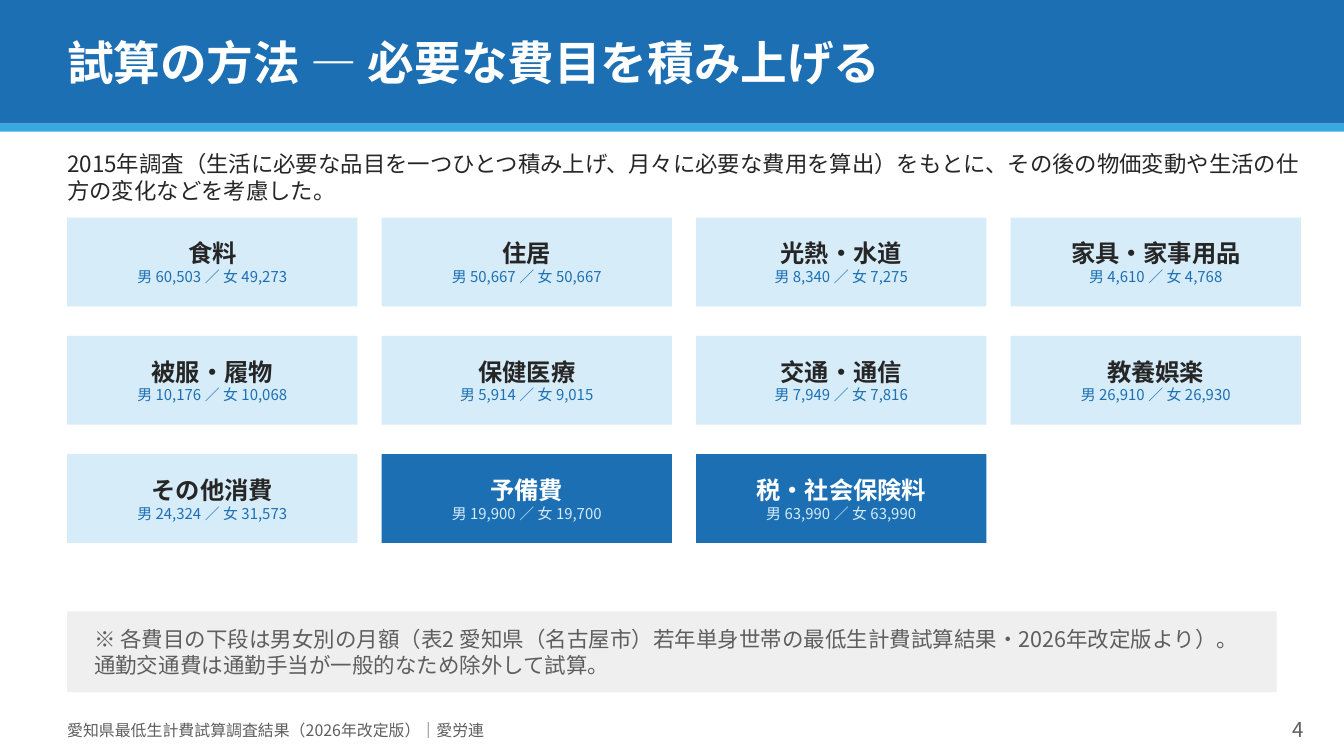
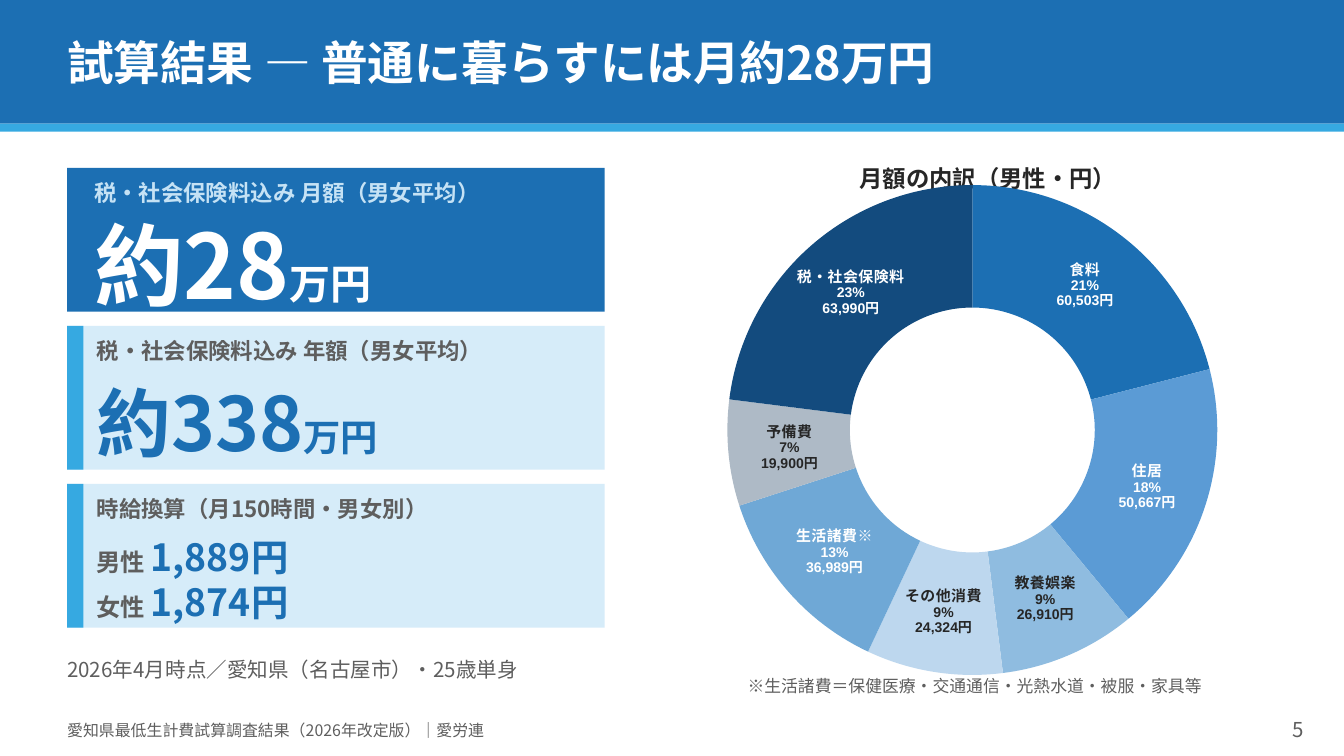
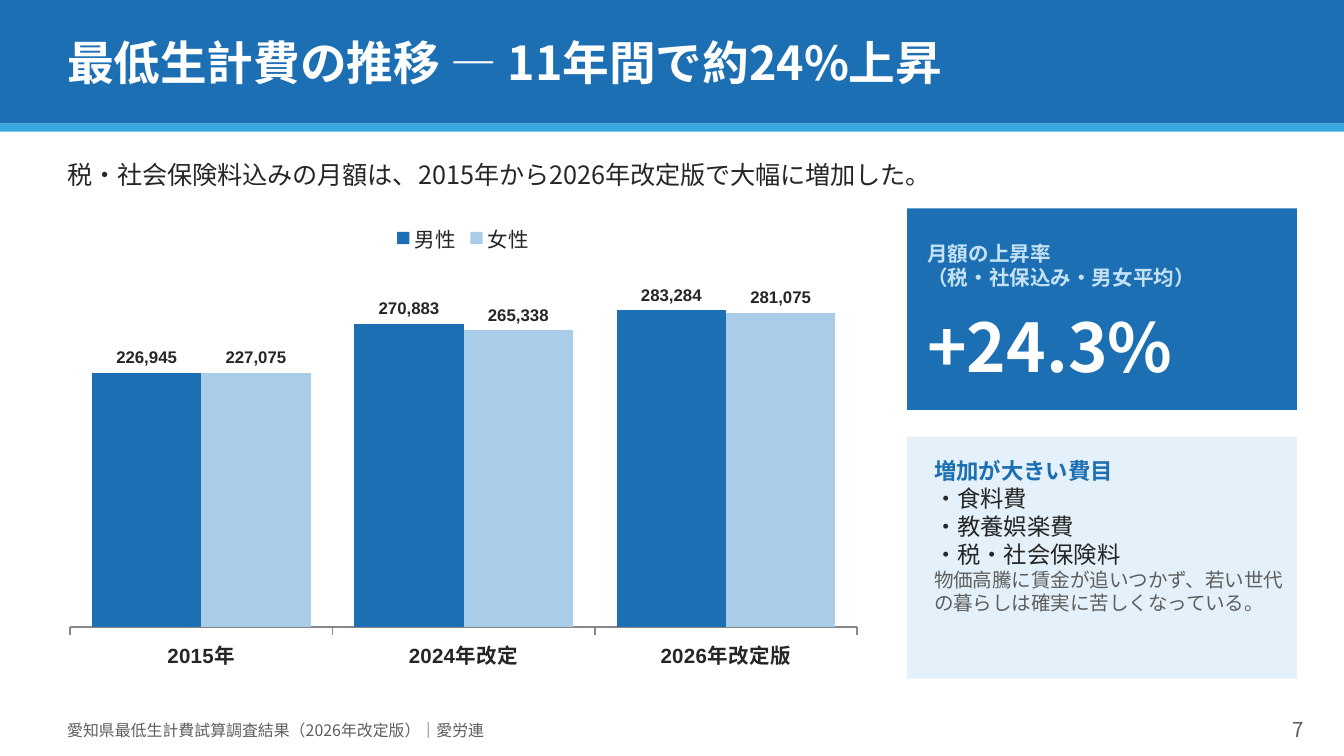
from dataclasses import dataclass
from typing import NamedTuple

import lxml.etree
import pptx
import pptx.chart.chart
import pptx.chart.data
import pptx.dml.color
import pptx.enum.chart
import pptx.enum.shapes
import pptx.enum.text
import pptx.oxml.ns
import pptx.presentation
import pptx.shapes.base
import pptx.slide
import pptx.text.text
import pptx.util

BLUE, SKY, PALE, MIST = "1C6FB3", "36A9E1", "D6ECF9", "E4F1FA"
LIGHT, INK, GREY, WHITE = "C5E2F5", "262626", "5E5E5E", "FFFFFF"
FONT, CHART_FONT, LABEL_FONT = "Noto Sans CJK JP", "Calibri", "Arial"
FOOTER = "愛知県最低生計費試算調査結果（2026年改定版）｜愛労連"
LEFT = pptx.enum.text.PP_ALIGN.LEFT
CENTER = pptx.enum.text.PP_ALIGN.CENTER
RIGHT = pptx.enum.text.PP_ALIGN.RIGHT
MIDDLE = pptx.enum.text.MSO_ANCHOR.MIDDLE
TOP = pptx.enum.text.MSO_ANCHOR.TOP


class Area(NamedTuple):
    """Left, top, width and height in inches."""

    left: float
    top: float
    width: float
    height: float


class Span(NamedTuple):
    """A stretch of text in one format."""

    text: str
    size: float
    ink: str
    bold: bool = False
    font: str = FONT


Lines = list[list[Span]]


@dataclass
class Expense:
    """Monthly amounts of one expense item."""

    name: str
    male: str
    female: str
    strong: bool = False


@dataclass
class Panel:
    """A headline figure with its caption."""

    caption: str
    figures: Lines
    strong: bool = False


@dataclass
class Slice:
    """One part of the monthly breakdown."""

    name: str
    percent: int
    amount: str
    fill: str
    ink: str


EXPENSES = [
    Expense("食料", "60,503", "49,273"),
    Expense("住居", "50,667", "50,667"),
    Expense("光熱・水道", "8,340", "7,275"),
    Expense("家具・家事用品", "4,610", "4,768"),
    Expense("被服・履物", "10,176", "10,068"),
    Expense("保健医療", "5,914", "9,015"),
    Expense("交通・通信", "7,949", "7,816"),
    Expense("教養娯楽", "26,910", "26,930"),
    Expense("その他消費", "24,324", "31,573"),
    Expense("予備費", "19,900", "19,700", strong=True),
    Expense("税・社会保険料", "63,990", "63,990", strong=True),
]
PANELS = [
    Panel("税・社会保険料込み 月額（男女平均）",
          [[Span("約28", 48, WHITE, True), Span("万円", 22, WHITE, True)]], strong=True),
    Panel("税・社会保険料込み 年額（男女平均）",
          [[Span("約338", 40, BLUE, True), Span("万円", 20, BLUE, True)]]),
    Panel("時給換算（月150時間・男女別）",
          [[Span(f"{who} ", 13, GREY, True), Span(wage, 20, BLUE, True)]
           for who, wage in (("男性", "1,889円"), ("女性", "1,874円"))]),
]
SLICES = [
    Slice("食料", 21, "60,503円", BLUE, WHITE),
    Slice("住居", 18, "50,667円", "5B9BD5", WHITE),
    Slice("教養娯楽", 9, "26,910円", "8FBCE0", INK),
    Slice("その他消費", 9, "24,324円", "BDD7EE", INK),
    Slice("生活諸費※", 13, "36,989円", "6FA8D6", WHITE),
    Slice("予備費", 7, "19,900円", "AEBAC6", INK),
    Slice("税・社会保険料", 23, "63,990円", "134B7E", WHITE),
]


def colour(code: str) -> pptx.dml.color.RGBColor:
    """Turn a hex string into a colour."""
    return pptx.dml.color.RGBColor.from_string(code)


def add_element(parent: lxml.etree._Element, tag: str, **attributes: str) -> lxml.etree._Element:
    """Append a child element with a prefixed tag."""
    return lxml.etree.SubElement(parent, pptx.oxml.ns.qn(tag), attributes)


def write(para: pptx.text.text._Paragraph, text: str, *, size: float, ink: str,
          bold: bool = False, font: str = FONT) -> None:
    """Add formatted text to a paragraph."""
    span = para.add_run()
    span.text = text
    span.font.size = pptx.util.Pt(size)
    span.font.bold = bold
    span.font.color.rgb = colour(ink)
    span.font.name = font
    add_element(span._r.get_or_add_rPr(), "a:ea", typeface=font)


def write_lines(frame: pptx.text.text.TextFrame, lines: Lines,
                align: pptx.enum.text.PP_ALIGN | None = None) -> None:
    """Write one paragraph for each line."""
    for index, line in enumerate(lines):
        para = frame.add_paragraph() if index else frame.paragraphs[0]
        if align is not None:
            para.alignment = align
        for span in line:
            write(para, **span._asdict())


def format_frame(frame: pptx.text.text.TextFrame, anchor: pptx.enum.text.MSO_ANCHOR) -> None:
    """Wrap the text and remove the margins."""
    frame.word_wrap = True
    frame.auto_size = pptx.enum.text.MSO_AUTO_SIZE.NONE
    frame.vertical_anchor = anchor
    frame.margin_left = frame.margin_top = frame.margin_right = frame.margin_bottom = 0


def lengths(area: Area) -> list[pptx.util.Length]:
    """Convert an area to lengths."""
    return [pptx.util.Inches(value) for value in area]


def add_text(page: pptx.slide.Slide, area: Area, lines: Lines,
             align: pptx.enum.text.PP_ALIGN = LEFT) -> None:
    """Add a vertically centred text box."""
    box = page.shapes.add_textbox(*lengths(area))
    format_frame(box.text_frame, MIDDLE)
    write_lines(box.text_frame, lines, align)


def add_block(page: pptx.slide.Slide, area: Area, fill: str) -> None:
    """Add a plain filled rectangle."""
    block = page.shapes.add_shape(pptx.enum.shapes.MSO_SHAPE.RECTANGLE, *lengths(area))
    block.shadow.inherit = False
    block.fill.solid()
    block.fill.fore_color.rgb = colour(fill)
    block.line.fill.background()


def place_on_top(holder: pptx.shapes.base.BaseShape, area: Area,
                 anchor: pptx.enum.text.MSO_ANCHOR) -> None:
    """Move a placeholder to an area in front of the other shapes."""
    holder.left, holder.top, holder.width, holder.height = lengths(area)
    format_frame(holder.text_frame, anchor)
    holder.element.getparent().append(holder.element)


def add_page(deck: pptx.presentation.Presentation, title: str, number: int,
             layout: int = 5) -> pptx.slide.Slide:
    """Add a page with title band and footer."""
    page = deck.slides.add_slide(deck.slide_layouts[layout])
    add_block(page, Area(0, 0, 10, 0.92), BLUE)
    add_block(page, Area(0, 0.92, 10, 0.06), SKY)
    place_on_top(page.shapes.title, Area(0.5, 0, 9, 0.92), MIDDLE)
    write_lines(page.shapes.title.text_frame, [[Span(title, 25, WHITE, True)]], LEFT)
    add_text(page, Area(0.5, 5.28, 7.5, 0.3), [[Span(FOOTER, 8.5, GREY)]])
    add_text(page, Area(9.1, 5.28, 0.6, 0.3), [[Span(str(number), 11, GREY)]], RIGHT)
    return page


def set_bullet(para: pptx.text.text._Paragraph, bullet: str = "") -> None:
    """Give a paragraph a hanging bullet, or none."""
    indent = pptx.util.Inches(0.17) if bullet else 0
    properties = para._p.get_or_add_pPr()
    properties.set("marL", str(indent))
    properties.set("indent", str(-indent))
    if bullet:
        add_element(properties, "a:buFont", typeface=FONT)
        add_element(properties, "a:buChar", char=bullet)
    else:
        add_element(properties, "a:buNone")


def set_font(font: pptx.text.text.Font, size: float, ink: str, *, bold: bool = False,
             name: str = LABEL_FONT) -> None:
    """Format the font of a chart part."""
    font.size = pptx.util.Pt(size)
    font.bold = bold
    font.name = name
    font.color.rgb = colour(ink)


def add_chart(page: pptx.slide.Slide, kind: pptx.enum.chart.XL_CHART_TYPE, area: Area,
              data: pptx.chart.data.CategoryChartData, plot_area: Area) -> pptx.chart.chart.Chart:
    """Add a chart whose plot fills the given share of its area."""
    chart = page.shapes.add_chart(kind, *lengths(area), data).chart
    chart.has_title = False
    chart.has_legend = False
    set_font(chart.font, 10, "000000", name=CHART_FONT)
    region = chart._chartSpace.chart.plotArea
    for layout in region.findall(pptx.oxml.ns.qn("c:layout")):
        region.remove(layout)
    layout = add_element(region, "c:layout")
    region.insert(0, layout)
    manual = add_element(layout, "c:manualLayout")
    add_element(manual, "c:layoutTarget", val="inner")
    for tag in ("c:xMode", "c:yMode"):
        add_element(manual, tag, val="edge")
    for tag, share in zip(("c:x", "c:y", "c:w", "c:h"), plot_area):
        add_element(manual, tag, val=str(share))
    return chart


def add_expense(page: pptx.slide.Slide, expense: Expense, left: float, top: float) -> None:
    """Draw the card of one expense item."""
    add_block(page, Area(left, top, 2.16, 0.66), BLUE if expense.strong else PALE)
    amounts = f"男 {expense.male} ／ 女 {expense.female}"
    add_text(page, Area(left + 0.1, top, 1.96, 0.66), [
        [Span(expense.name, 13, WHITE if expense.strong else INK, True)],
        [Span(amounts, 8, PALE if expense.strong else BLUE)],
    ], CENTER)


def add_panel(page: pptx.slide.Slide, panel: Panel, top: float) -> None:
    """Draw a headline figure."""
    add_block(page, Area(0.5, top, 4, 1.07), BLUE if panel.strong else PALE)
    if not panel.strong:
        add_block(page, Area(0.5, top, 0.12, 1.07), SKY)
    left, width = (0.7, 3.6) if panel.strong else (0.72, 3.7)
    ink = LIGHT if panel.strong else GREY
    add_text(page, Area(left, top + 0.01, width, 0.35), [[Span(panel.caption, 12, ink, True)]])
    add_text(page, Area(left, top + 0.36, width, 0.7), panel.figures)


def add_breakdown(page: pptx.slide.Slide) -> None:
    """Draw the doughnut of monthly expenses."""
    data = pptx.chart.data.CategoryChartData(number_format="0")
    data.categories = [part.name for part in SLICES]
    data.add_series("Series 1", [part.percent for part in SLICES])
    chart = add_chart(page, pptx.enum.chart.XL_CHART_TYPE.DOUGHNUT,
                      Area(4.6, 1.26, 5.27, 3.92), data, Area(0.15, 0.03, 0.7, 0.93))
    plot = chart.plots[0]
    plot.vary_by_categories = True
    plot._element.find(pptx.oxml.ns.qn("c:holeSize")).set("val", "55")
    series = plot.series[0]
    series.format.line.color.rgb = colour("F9F9F9")
    series.format.line.width = pptx.util.Pt(0.75)
    labels = series.data_labels
    labels.show_value = False
    labels.show_percentage = labels.show_category_name = True
    labels.number_format = "0%"
    labels.number_format_is_linked = False
    set_font(labels.font, 18, "000000", bold=True)
    for index, part in enumerate(SLICES):
        point = series.points[index]
        point.format.fill.solid()
        point.format.fill.fore_color.rgb = colour(part.fill)
        label = ((part.name, 8), (f"{part.percent}%", 7.5), (part.amount, 7.5))
        write_lines(point.data_label.text_frame,
                    [[Span(text, size, part.ink, True, LABEL_FONT)] for text, size in label])


def add_trend(page: pptx.slide.Slide) -> None:
    """Draw the columns of monthly cost by year."""
    data = pptx.chart.data.CategoryChartData(number_format="#,##0")
    data.categories = ["2015年", "2024年改定", "2026年改定版"]
    data.add_series("男性", [226945, 270883, 283284])
    data.add_series("女性", [227075, 265338, 281075])
    chart = add_chart(page, pptx.enum.chart.XL_CHART_TYPE.COLUMN_CLUSTERED,
                      Area(0.4, 1.55, 6.1, 3.5), data, Area(0.02, 0.13, 0.96, 0.76))
    chart.has_legend = True
    chart.legend.position = pptx.enum.chart.XL_LEGEND_POSITION.TOP
    chart.legend.include_in_layout = False
    set_font(chart.legend.font, 11, INK, name=CHART_FONT)
    values = chart.value_axis
    values.visible = values.has_major_gridlines = False
    values.minimum_scale, values.maximum_scale = 0, 320000
    years = chart.category_axis
    years.tick_label_position = pptx.enum.chart.XL_TICK_LABEL_POSITION.LOW
    years.major_tick_mark = pptx.enum.chart.XL_TICK_MARK.OUTSIDE
    years.format.line.color.rgb = colour("888888")
    years.format.line.width = pptx.util.Pt(1)
    set_font(years.tick_labels.font, 11, INK, bold=True)
    plot = chart.plots[0]
    plot.vary_by_categories = False
    plot.gap_width, plot.overlap = 40, 0
    for series, fill in zip(plot.series, (BLUE, "A9CCE8")):
        series.format.fill.solid()
        series.format.fill.fore_color.rgb = colour(fill)
        labels = series.data_labels
        labels.show_value = True
        labels.number_format = "#,##0"
        labels.number_format_is_linked = False
        labels.position = pptx.enum.chart.XL_LABEL_POSITION.OUTSIDE_END
        set_font(labels.font, 9, INK, bold=True)


def build_method(deck: pptx.presentation.Presentation) -> None:
    """Build the page on the method."""
    page = add_page(deck, "試算の方法 — 必要な費目を積み上げる", 4)
    add_text(page, Area(0.5, 1.12, 9.18, 0.4), [[Span(
        "2015年調査（生活に必要な品目を一つひとつ積み上げ、月々に必要な費用を算出）をもとに、"
        "その後の物価変動や生活の仕方の変化などを考慮した。", 12, INK)]])
    for index, expense in enumerate(EXPENSES):
        row, column = divmod(index, 4)
        add_expense(page, expense, 0.5 + 2.34 * column, 1.62 + 0.88 * row)
    add_block(page, Area(0.5, 4.55, 9, 0.6), "EFEFEF")
    add_text(page, Area(0.7, 4.55, 8.6, 0.6), [[Span(
        "※ 各費目の下段は男女別の月額（表2 愛知県（名古屋市）若年単身世帯の最低生計費試算結果・"
        "2026年改定版より）。通勤交通費は通勤手当が一般的なため除外して試算。", 11.5, GREY)]])


def build_result(deck: pptx.presentation.Presentation) -> None:
    """Build the page on the result."""
    page = add_page(deck, "試算結果 — 普通に暮らすには月約28万円", 5)
    for index, panel in enumerate(PANELS):
        add_panel(page, panel, 1.25 + 2.35 * index / 2)
    add_text(page, Area(0.5, 4.78, 4, 0.4),
             [[Span("2026年4月時点／愛知県（名古屋市）・25歳単身", 11, GREY)]])
    add_text(page, Area(5, 1.15, 4.7, 0.35),
             [[Span("月額の内訳（男性・円）", 12.5, INK, True)]], CENTER)
    add_breakdown(page)
    add_text(page, Area(4.7, 4.95, 5.1, 0.3),
             [[Span("※生活諸費＝保健医療・交通通信・光熱水道・被服・家具等", 9, GREY)]], CENTER)


def build_trend(deck: pptx.presentation.Presentation) -> None:
    """Build the page on the rise since 2015."""
    page = add_page(deck, "最低生計費の推移 — 11年間で約24%上昇", 7, layout=1)
    add_text(page, Area(0.5, 1.1, 9, 0.4), [[Span(
        "税・社会保険料込みの月額は、2015年から2026年改定版で大幅に増加した。", 13.5, INK)]])
    add_trend(page)
    add_block(page, Area(6.75, 1.55, 2.9, 1.5), BLUE)
    add_text(page, Area(6.9, 1.7, 2.6, 0.55),
             [[Span(text, 11, LIGHT, True)]
              for text in ("月額の上昇率", "（税・社保込み・男女平均）")])
    add_text(page, Area(6.9, 2.2, 2.6, 0.75), [[Span("+24.3%", 36, WHITE, True)]])
    add_block(page, Area(6.75, 3.25, 2.9, 1.8), MIST)
    items = ["食料費", "教養娯楽費", "税・社会保険料"]
    body = page.placeholders[1]
    place_on_top(body, Area(6.95, 3.4, 2.65, 1.55), TOP)
    write_lines(body.text_frame, [
        [Span("増加が大きい費目", 12, BLUE, True)],
        *[[Span(item, 12.5, INK)] for item in items],
        [Span("物価高騰に賃金が追いつかず、若い世代の暮らしは確実に苦しくなっている。", 10.5, GREY)],
    ], LEFT)
    for para in body.text_frame.paragraphs:
        set_bullet(para, "・" if para.text in items else "")
        para.space_before = pptx.util.Pt(0)


def main() -> None:
    """Build and save the deck."""
    deck = pptx.Presentation()
    deck.slide_width = pptx.util.Inches(10)
    deck.slide_height = deck.slide_width * 9 // 16
    build_method(deck)
    build_result(deck)
    build_trend(deck)
    deck.save("out.pptx")


if __name__ == "__main__":
    main()
